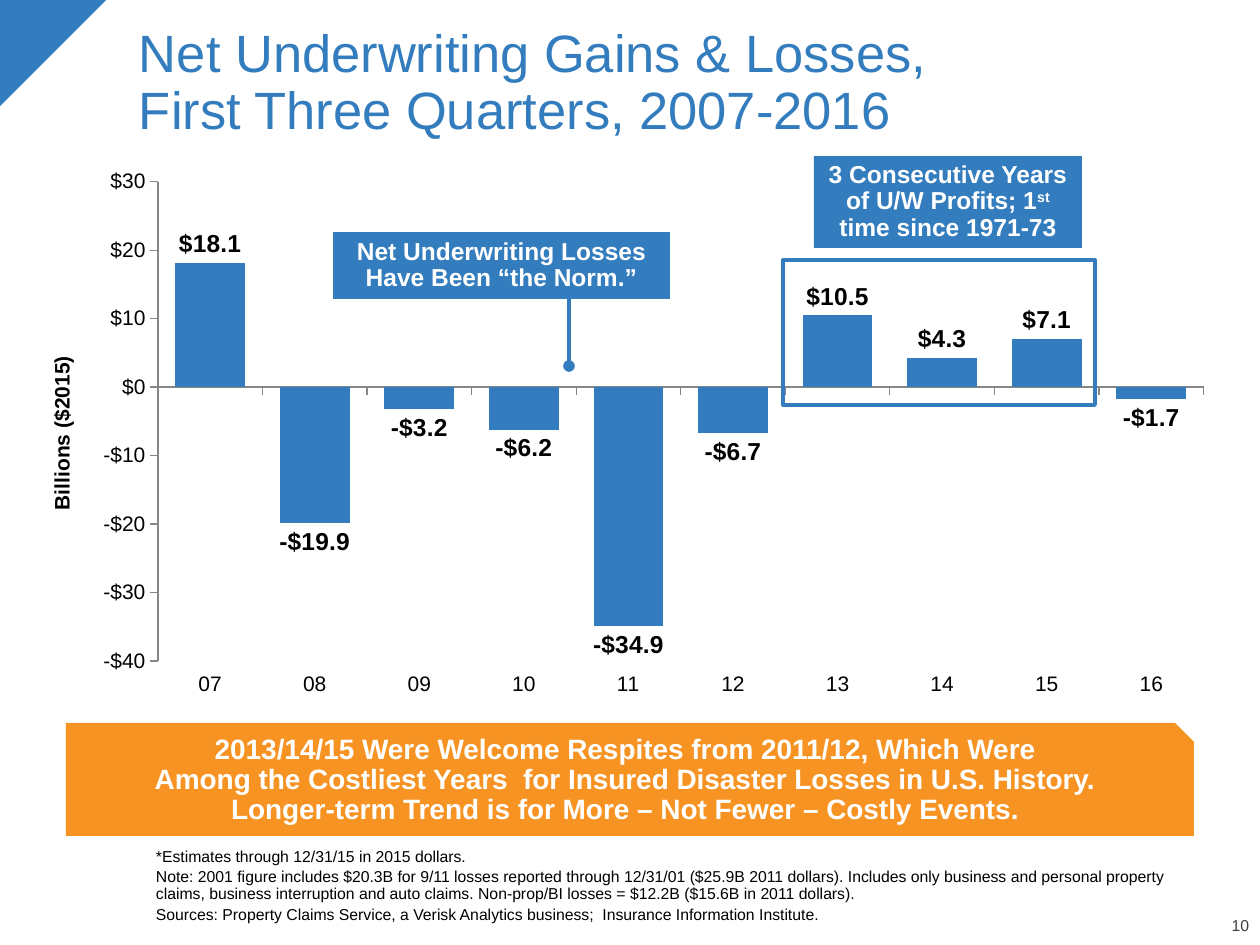
from lxml import etree
from pptx import Presentation
from pptx import util as u
from pptx.chart.data import CategoryChartData
from pptx.dml.color import RGBColor
from pptx.enum import chart as ch, shapes, text
from pptx.oxml import parse_xml
from pptx.oxml.ns import nsdecls, qn

BLUE, ORANGE, WHITE, BLACK, GRAY, AXIS = "337DBE", "F69322", "FFFFFF", "000000", "404040", "868686"
FONT = "Arial"

TITLE = "Net Underwriting Gains & Losses, First Three Quarters, 2007-2016"
RESULTS = [("07", 18.1), ("08", -19.9), ("09", -3.2), ("10", -6.2), ("11", -34.9),
           ("12", -6.7), ("13", 10.5), ("14", 4.3), ("15", 7.1), ("16", -1.7)]
AXIS_TITLE = "Billions ($2015)"
NORM = "Net Underwriting Losses Have Been “the Norm.”"
PROFITS = [("3 Consecutive Years of U/W Profits; 1", False), ("st", True),
           (" time since 1971-73", False)]
TAKEAWAY = ["2013/14/15 Were Welcome Respites from 2011/12, Which Were",
            "Among the Costliest Years  for Insured Disaster Losses in U.S. History.",
            "Longer-term Trend is for More – Not Fewer – Costly Events."]
NOTES = ["*Estimates through 12/31/15 in 2015 dollars.",
         "Note: 2001 figure includes $20.3B for 9/11 losses reported through 12/31/01 "
         "($25.9B 2011 dollars). Includes only business and personal property claims, "
         "business interruption and auto claims. Non-prop/BI losses = $12.2B "
         "($15.6B in 2011 dollars).",
         "Sources: Property Claims Service, a Verisk Analytics business;  "
         "Insurance Information Institute."]
PAGE = "10"
PLOT = {"x": 0.1, "y": 0.034, "w": 0.887, "h": 0.867}


def px(n):
    return round(n * 914400 / 126)


def rgb(color):
    return RGBColor.from_string(color)


def style(font, size, color, bold=False):
    font.name, font.size, font.bold = FONT, u.Pt(size), bold
    font.color.rgb = rgb(color)


def add_block(kind, place, fill=None, line=None):
    block = slide.shapes.add_shape(kind, *map(px, place))
    block.shadow.inherit = False
    if fill:
        block.fill.solid()
        block.fill.fore_color.rgb = rgb(fill)
    else:
        block.fill.background()
    if line:
        block.line.color.rgb = rgb(line)
        block.line.width = u.Pt(2.25)
    else:
        block.line.fill.background()
    return block


def add_text(place):
    return slide.shapes.add_textbox(*map(px, place))


def write(shape, runs, size, color, bold=False, align="LEFT", anchor="MIDDLE",
          insets=(13, 6, 13, 6), before=0):
    frame = shape.text_frame
    frame.word_wrap = True
    frame.vertical_anchor = text.MSO_ANCHOR[anchor]
    (frame.margin_left, frame.margin_top,
     frame.margin_right, frame.margin_bottom) = map(px, insets)
    if isinstance(runs, str):
        frame.text = runs
    else:
        for words, raised in runs:
            run = frame.paragraphs[0].add_run()
            run.text = words
            if raised:
                run.font._element.set("baseline", "30000")
    for i, paragraph in enumerate(frame.paragraphs):
        paragraph.alignment = text.PP_ALIGN[align]
        paragraph.line_spacing = 0.9
        paragraph.space_before = u.Pt(before if i else 0)
        for run in paragraph.runs:
            style(run.font, size, color, bold)


def add_results_chart(place):
    data = CategoryChartData()
    data.categories = [year for year, _ in RESULTS]
    data.add_series("Series 1", [value for _, value in RESULTS])
    chart = slide.shapes.add_chart(
        ch.XL_CHART_TYPE.COLUMN_CLUSTERED, *map(px, place), data).chart
    chart.has_legend = chart.has_title = False
    style(chart.font, 12, BLACK)

    plot = chart.plots[0]
    plot.gap_width, plot.vary_by_categories = 50, False
    series = plot.series[0]
    series.invert_if_negative = False
    series.format.fill.solid()
    series.format.fill.fore_color.rgb = rgb(BLUE)
    labels = series.data_labels
    labels.show_value = True
    labels.number_format, labels.number_format_is_linked = '"$"#,##0.0', False
    labels.position = ch.XL_LABEL_POSITION.OUTSIDE_END
    style(labels.font, 14, BLACK, True)

    years, dollars = chart.category_axis, chart.value_axis
    for axis in (years, dollars):
        axis.has_major_gridlines = False
        axis.major_tick_mark = ch.XL_TICK_MARK.OUTSIDE
        axis.minor_tick_mark = ch.XL_TICK_MARK.NONE
        axis.format.line.color.rgb = rgb(AXIS)
        axis.format.line.width = u.Pt(0.75)
    years.tick_label_position = ch.XL_TICK_LABEL_POSITION.LOW
    dollars.minimum_scale, dollars.maximum_scale, dollars.major_unit = -40, 30, 10
    dollars.tick_labels.number_format = '"$"#,##0'
    dollars.tick_labels.number_format_is_linked = False
    heading = dollars.axis_title
    heading.text_frame.text = AXIS_TITLE
    style(heading.text_frame.paragraphs[0].runs[0].font, 12, BLACK, True)
    heading._element.xpath(".//a:bodyPr")[0].set("rot", "-5400000")

    area = chart._chartSpace.chart.plotArea
    for old in area.findall(qn("c:layout")):
        area.remove(old)
    sizes = "".join(f'<c:{key} val="{value}"/>' for key, value in PLOT.items())
    area.insert(0, parse_xml(
        f'<c:layout {nsdecls("c")}><c:manualLayout><c:layoutTarget val="inner"/>'
        f'<c:xMode val="edge"/><c:yMode val="edge"/>{sizes}'
        '</c:manualLayout></c:layout>'))


def add_pointer(x, top, bottom):
    pointer = slide.shapes.add_connector(
        shapes.MSO_CONNECTOR.STRAIGHT, px(x), px(top), px(x), px(bottom))
    pointer.line.color.rgb = rgb(BLUE)
    pointer.line.width = u.Pt(2.25)
    etree.SubElement(pointer.line._get_or_add_ln(), qn("a:tailEnd"), type="oval")
    etree.SubElement(pointer._element.spPr, qn("a:effectLst"))


deck = Presentation()
deck.slide_width, deck.slide_height = px(1260), px(945)
slide = deck.slides.add_slide(deck.slide_layouts[6])
KIND = shapes.MSO_SHAPE

corner = add_block(KIND.RIGHT_TRIANGLE, (0, 0, 106, 106), BLUE)
corner.rotation = 90
write(add_text((1188, 918, 61, 17)), PAGE, 9, GRAY, align="RIGHT", anchor="BOTTOM",
      insets=(0, 0, 0, 0))
write(add_text((126, 24, 874, 123)), TITLE, 30, BLUE, anchor="BOTTOM")
write(add_text((156, 846, 1058, 78)), "\n".join(NOTES), 9, BLACK, anchor="BOTTOM",
      insets=(0, 0, 0, 0), before=2)
add_results_chart((40, 163, 1179, 553))
takeaway = add_block(KIND.SNIP_1_RECTANGLE, (66, 723, 1128, 113), ORANGE)
write(takeaway, "\v".join(TAKEAWAY), 16, WHITE, True, "CENTER", insets=(13, 6, 13, 13))
add_pointer(569, 273, 366)
norm = add_block(KIND.RECTANGLE, (333, 232, 337, 67), BLUE)
write(norm, NORM, 14, WHITE, True, "CENTER")
add_block(KIND.RECTANGLE, (783, 260, 312, 145), line=BLUE)
profits = add_block(KIND.RECTANGLE, (814, 156, 268, 92), BLUE)
write(profits, PROFITS, 14, WHITE, True, "CENTER")

deck.save("out.pptx")
